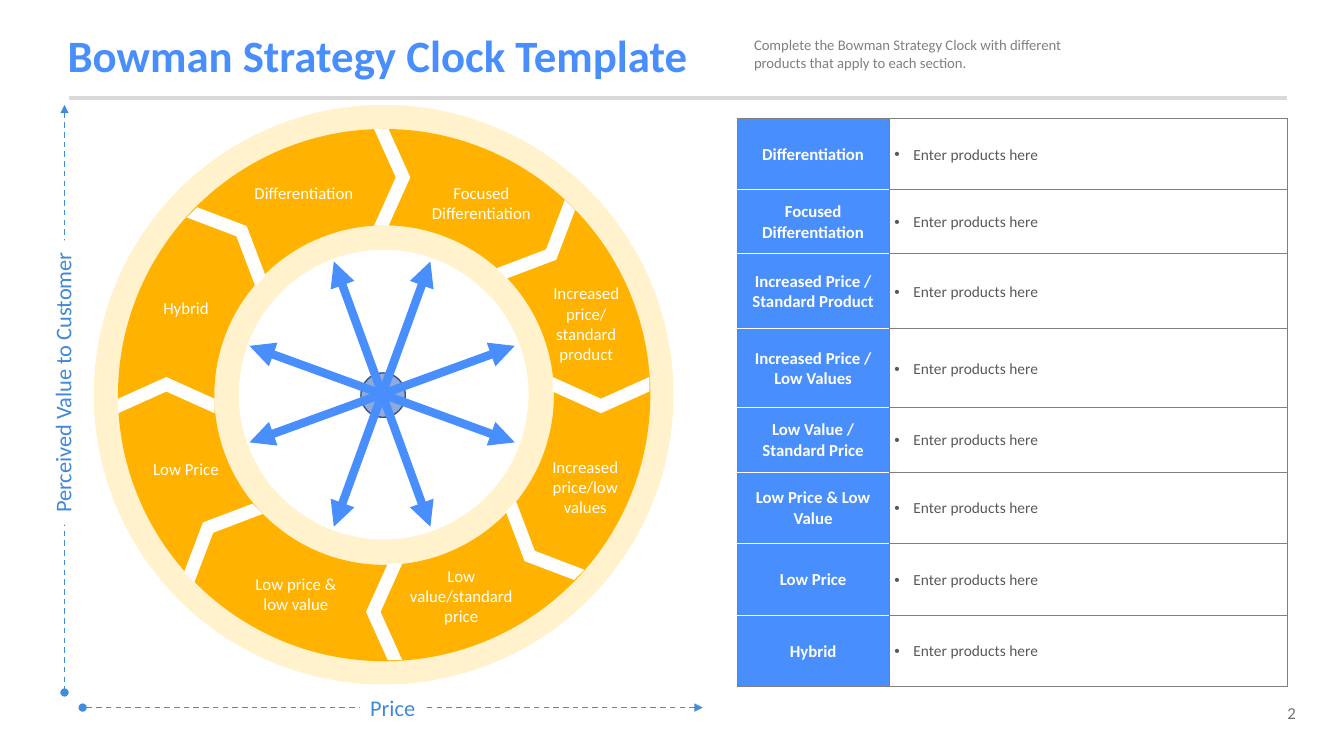
import math
from dataclasses import dataclass

from lxml import etree
from pptx import Presentation
from pptx.dml.color import RGBColor
from pptx.enum import dml, shapes, text
from pptx.oxml import ns
from pptx.util import Inches, Pt


@dataclass(frozen=True)
class Theme:
    font: str = "Calibri"
    blue: str = "488EFD"
    axis: str = "428CDE"
    axis_text: str = "4088D8"
    hub: str = "8FAADC"
    hub_line: str = "325491"
    amber: str = "FFB200"
    cream: str = "FFF2CC"
    white: str = "FFFFFF"
    rule: str = "D9D9D9"
    grid: str = "808080"
    body: str = "595959"
    number: str = "767171"
    title_size: float = 32
    axis_size: float = 16
    label_size: float = 12
    body_size: float = 11
    note_size: float = 10.5


T = Theme()
SHAPE, ALIGN = shapes.MSO_SHAPE, text.PP_ALIGN
CENTER_X, CENTER_Y = 3.79, 3.91
SPOKE_LENGTH = 1.4

# Left and top of each gap in the ring, clockwise from twelve o'clock
GAPS = [(3.71, 1.28), (5.21, 1.97), (5.78, 3.44), (5.15, 4.96),
        (3.63, 5.59), (1.96, 4.83), (1.47, 3.44), (2.14, 1.89)]

SECTIONS = [
    ("Differentiation", (2.25, 1.76, 1.53, 0.3)),
    ("Focused Differentiation", (4.01, 1.76, 1.53, 0.5)),
    ("Increased\nprice/\nstandard\nproduct", (5.15, 2.76, 1.33, 0.91)),
    ("Increased price/low values", (5.19, 4.48, 1.23, 0.71)),
    ("Low value/standard price", (3.96, 5.56, 1.23, 0.71)),
    ("Low price & low value", (2.32, 5.64, 1.23, 0.5)),
    ("Low Price", (1.23, 4.5, 1.23, 0.3)),
    ("Hybrid", (1.23, 2.9, 1.23, 0.3)),
]

TABLE_ROWS = [
    ("Differentiation", 0.71),
    ("Focused Differentiation", 0.63),
    ("Increased Price / Standard Product", 0.75),
    ("Increased Price / Low Values", 0.78),
    ("Low Value / Standard Price", 0.64),
    ("Low Price & Low Value", 0.71),
    ("Low Price", 0.71),
    ("Hybrid", 0.71),
]


def rgb(color):
    return RGBColor.from_string(color)


def box(*lengths):
    return [Inches(n) for n in lengths]


def write(tf, words, size, color, align=ALIGN.LEFT, bold=False):
    tf.text = words
    for p in tf.paragraphs:
        p.alignment = align
        for r in p.runs:
            r.font.name, r.font.size, r.font.bold = T.font, Pt(size), bold
            r.font.color.rgb = rgb(color)


def add_label(slide, words, at, size, color, align=ALIGN.CENTER):
    tf = slide.shapes.add_textbox(*box(*at)).text_frame
    tf.word_wrap = True
    tf.auto_size = text.MSO_AUTO_SIZE.SHAPE_TO_FIT_TEXT
    write(tf, words, size, color, align)


def add_figure(slide, kind, at, fill, rotation=0, adjust=None):
    sp = slide.shapes.add_shape(kind, *box(*at))
    sp.shadow.inherit = False
    sp.fill.solid()
    sp.fill.fore_color.rgb = rgb(fill)
    sp.line.fill.background()
    sp.rotation = rotation
    if adjust is not None:
        sp.adjustments[0] = adjust
    return sp


def add_line(slide, start, end, color, width, head=None, tail=None, dashed=False):
    line = slide.shapes.add_connector(
        shapes.MSO_CONNECTOR.STRAIGHT, *box(*start, *end))
    line.line.color.rgb = rgb(color)
    line.line.width = Pt(width)
    if dashed:
        line.line.dash_style = dml.MSO_LINE.DASH
    ln = line.line._get_or_add_ln()
    for tag, kind in (("a:headEnd", head), ("a:tailEnd", tail)):
        if kind:
            etree.SubElement(ln, ns.qn(tag), type=kind)
    etree.SubElement(line._element.spPr, ns.qn("a:effectLst"))


def add_title(slide):
    title = slide.shapes.title
    title.left, title.top, title.width, title.height = box(0.57, 0.19, 10.94, 0.77)
    tf = title.text_frame
    tf.vertical_anchor = text.MSO_ANCHOR.MIDDLE
    write(tf, "Bowman Strategy Clock Template", T.title_size, T.blue, bold=True)
    tf.paragraphs[0].line_spacing = 0.9


def add_clock(slide):
    add_figure(slide, SHAPE.DONUT, (0.93, 1.04, 5.75, 5.75), T.cream)
    add_figure(slide, SHAPE.DONUT, (1.17, 1.28, 5.28, 5.28), T.amber, adjust=0.181)
    for i, (left, top) in enumerate(GAPS):
        add_figure(slide, SHAPE.CHEVRON, (left, top, 0.36, 0.96), T.white,
                   rotation=45 * i, adjust=0.6)
    for words, at in SECTIONS:
        add_label(slide, words, at, T.label_size, T.white)


def add_spokes(slide):
    hub = add_figure(slide, SHAPE.OVAL, (3.58, 3.7, 0.44, 0.44), T.hub)
    hub.line.color.rgb = rgb(T.hub_line)
    hub.line.width = Pt(1)
    for degrees in (20, 70, 110, 160):
        dx = SPOKE_LENGTH * math.cos(math.radians(degrees))
        dy = SPOKE_LENGTH * math.sin(math.radians(degrees))
        add_line(slide, (CENTER_X - dx, CENTER_Y - dy), (CENTER_X + dx, CENTER_Y + dy),
                 T.blue, 6, "triangle", "triangle")


def add_axis(slide, words, start, end, at, rotation=0):
    """Dashed arrow with its name on a white plate over the middle."""
    add_line(slide, start, end, T.axis, 1, "triangle", "oval", dashed=True)
    plate = add_figure(slide, SHAPE.RECTANGLE, at, T.white, rotation)
    tf = plate.text_frame
    tf.word_wrap = False
    tf.auto_size = text.MSO_AUTO_SIZE.SHAPE_TO_FIT_TEXT
    write(tf, words, T.axis_size, T.axis_text, ALIGN.CENTER)


def style_cell(cell, fill, top, bottom):
    """Borders go in before the fill, as the schema orders them."""
    tc_pr = cell._tc.get_or_add_tcPr()
    for side, color in zip("LRTB", (T.grid, T.grid, top, bottom)):
        ln = etree.SubElement(tc_pr, ns.qn(f"a:ln{side}"), w=str(Pt(0.25)))
        solid = etree.SubElement(ln, ns.qn("a:solidFill"))
        etree.SubElement(solid, ns.qn("a:srgbClr"), val=color)
    cell.fill.solid()
    cell.fill.fore_color.rgb = rgb(fill)
    cell.vertical_anchor = text.MSO_ANCHOR.MIDDLE
    cell.margin_left = cell.margin_right = Inches(0.05)
    cell.margin_top, cell.margin_bottom = Inches(0.02), 0


def add_bullet(p):
    p_pr = p._p.get_or_add_pPr()
    p_pr.set("marL", str(Inches(0.19)))
    p_pr.set("indent", str(Inches(-0.19)))
    etree.SubElement(p_pr, ns.qn("a:buFont"), typeface="Arial")
    etree.SubElement(p_pr, ns.qn("a:buChar"), char="•")


def add_products_table(slide):
    table = slide.shapes.add_table(
        len(TABLE_ROWS), 2, *box(7.31, 1.17, 5.46, 5.64)).table
    table.first_row = table.horz_banding = False
    for column, width in zip(table.columns, (1.51, 3.95)):
        column.width = Inches(width)
    last = len(TABLE_ROWS) - 1
    for i, (name, height) in enumerate(TABLE_ROWS):
        table.rows[i].height = Inches(height)
        section, products = table.cell(i, 0), table.cell(i, 1)
        style_cell(section, T.blue, T.white if i else T.grid,
                   T.white if i < last else T.grid)
        write(section.text_frame, name, T.label_size, T.white, ALIGN.CENTER, True)
        style_cell(products, T.white, T.grid, T.grid)
        write(products.text_frame, "Enter products here", T.body_size, T.body)
        add_bullet(products.text_frame.paragraphs[0])


def main():
    prs = Presentation()
    prs.slide_width, prs.slide_height = box(13.33, 7.5)
    slide = prs.slides.add_slide(prs.slide_layouts[5])
    add_label(slide, "2", (11.93, 6.92, 1.02, 0.3), T.label_size, T.number, ALIGN.RIGHT)
    add_line(slide, (0.68, 0.97), (12.76, 0.97), T.rule, 3)
    add_title(slide)
    add_clock(slide)
    add_axis(slide, "Perceived Value to Customer", (0.64, 1.04), (0.64, 6.87),
             (-0.79, 3.61, 2.82, 0.37), 270)
    add_axis(slide, "Price", (6.97, 7.02), (0.82, 7.02), (3.57, 6.83, 0.65, 0.37))
    add_spokes(slide)
    add_label(slide, "Complete the Bowman Strategy Clock with different products "
              "that apply to each section.", (7.38, 0.31, 3.28, 0.45),
              T.note_size, T.grid, ALIGN.LEFT)
    add_products_table(slide)
    prs.save("out.pptx")


if __name__ == "__main__":
    main()
